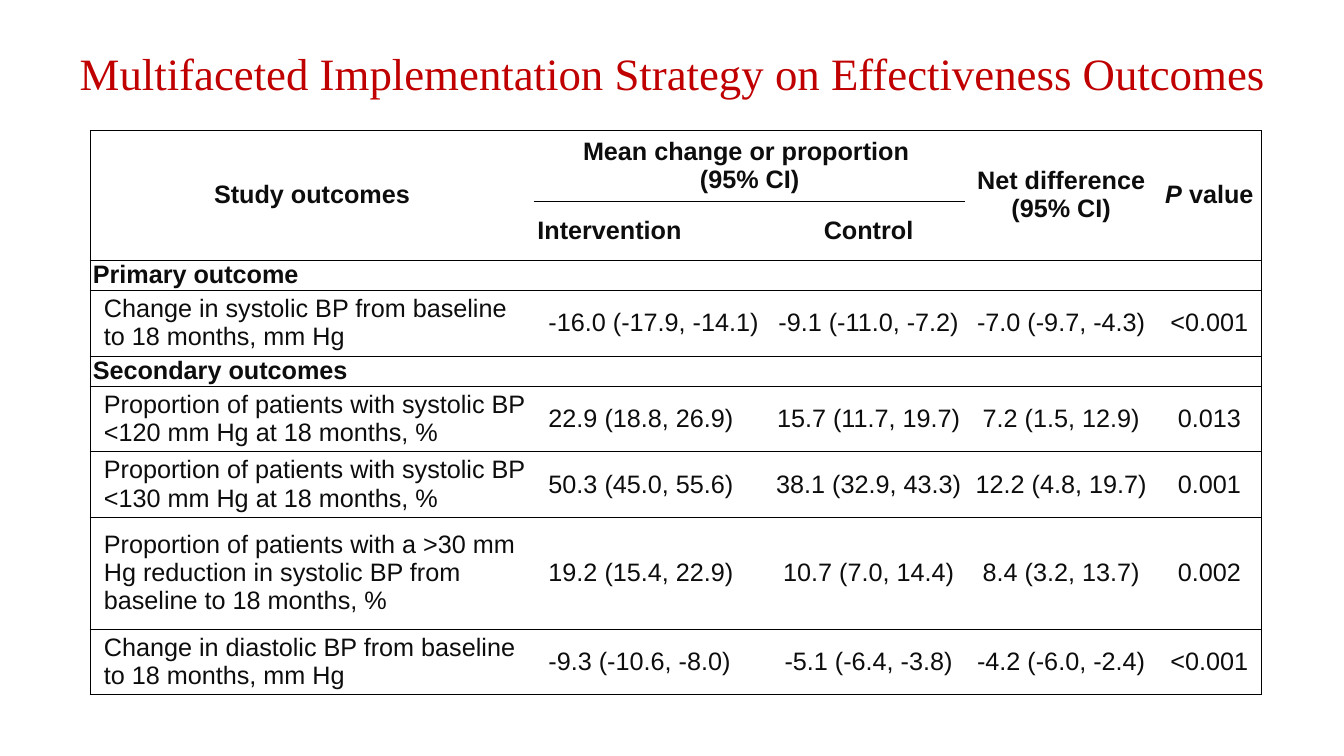
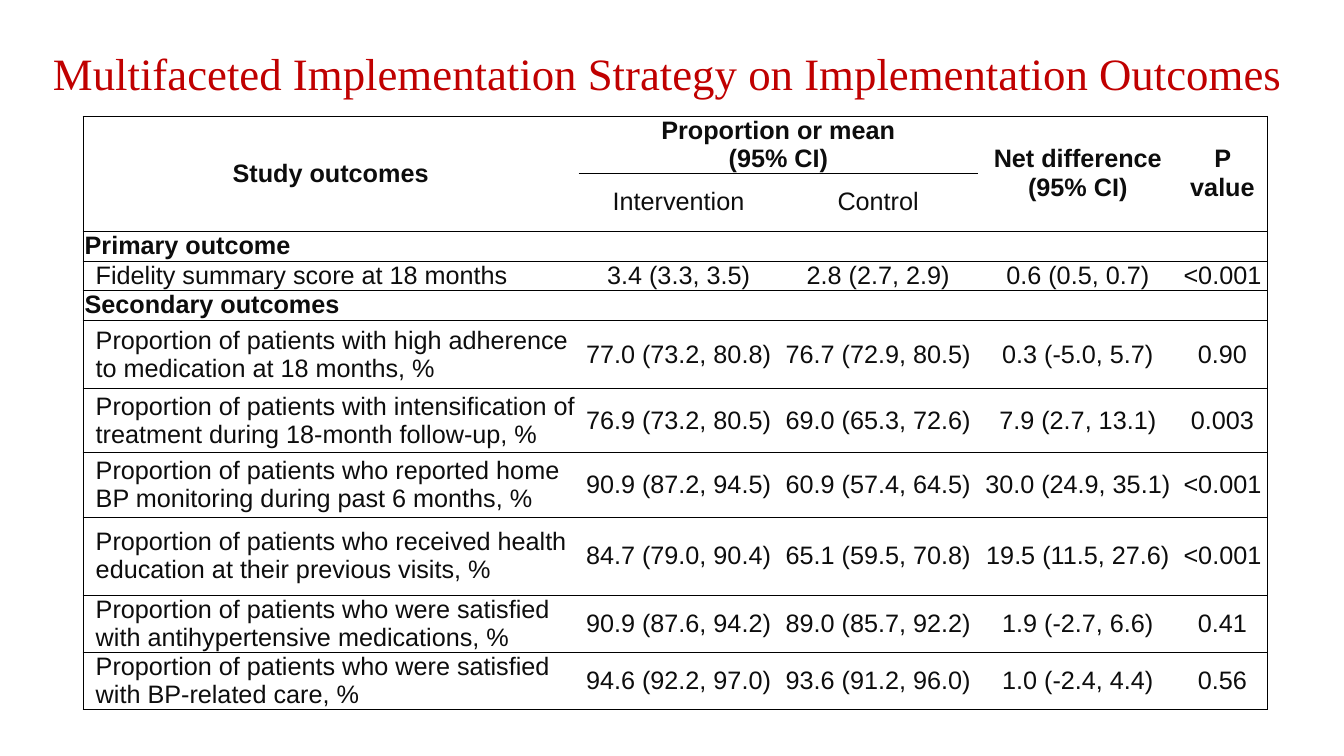
from pptx import Presentation
from pptx.dml.color import RGBColor
from pptx.enum import text
from pptx.oxml import parse_xml
from pptx.oxml.ns import nsdecls
from pptx.util import Inches, Pt

COLORS = {"title": "C00000", "ink": "0D0D0D", "rule": "000000"}
PLAIN = "{2D5ABB26-0587-4C30-8999-92F81FD0307C}"
CENTER, LEFT = text.PP_ALIGN.CENTER, text.PP_ALIGN.LEFT


def style(para, name, size, color, bold=False):
    font = para.font
    font.name, font.size, font.bold = name, Pt(size), bold
    font.color.rgb = RGBColor.from_string(COLORS[color])


def add_title(slide, box, words):
    title = slide.shapes.title
    title.left, title.top, title.width, title.height = map(Inches, box)
    frame = title.text_frame
    frame.auto_size = text.MSO_AUTO_SIZE.NONE
    frame.vertical_anchor = text.MSO_ANCHOR.MIDDLE
    frame.text = words
    para = frame.paragraphs[0]
    para.alignment, para.line_spacing = CENTER, 0.9
    style(para, "Times New Roman", 32, "title")


def put(cell, words, align=CENTER, bold=False, indent=0):
    """Fill a cell; words between asterisks are italic."""
    frame = cell.text_frame
    for n, line in enumerate(words.split("\n")):
        para = frame.add_paragraph() if n else frame.paragraphs[0]
        para.alignment = align
        style(para, "Arial", 18, "ink", bold)
        if indent:
            para._p.get_or_add_pPr().set("marL", str(Inches(indent)))
        for k, piece in enumerate(line.split("*")):
            if piece:
                run = para.add_run()
                run.text = piece
                if k % 2:
                    run.font.italic = True


def rule(cell, sides):
    for side in sides:
        cell._tc.get_or_add_tcPr().append(parse_xml(
            f'<a:ln{side} {nsdecls("a")} w="{Pt(0.25)}"><a:solidFill>'
            f'<a:srgbClr val="{COLORS["rule"]}"/></a:solidFill></a:ln{side}>'))


def frame_cells(table, inset, heads):
    """Rule every row, except between a section heading and its first row."""
    last = len(table.columns) - 1
    for r, row in enumerate(table.rows):
        for c, cell in enumerate(row.cells):
            cell.margin_left = cell.margin_right = Inches(inset[0])
            cell.margin_top = cell.margin_bottom = Inches(inset[1])
            cell.vertical_anchor = text.MSO_ANCHOR.MIDDLE
            if not cell.is_spanned:
                wide, high = (cell.span_width, cell.span_height) if cell.is_merge_origin else (1, 1)
                edges = {"L": c == 0, "R": c + wide - 1 == last,
                         "T": r - 1 not in heads, "B": r + high - 1 not in heads}
                rule(cell, [side for side, shown in edges.items() if shown])
            cell.fill.background()


def add_outcomes(slide, box, cols, heights, group, p_head, rows, inset,
                 sub_bold, merge_heads, left_col):
    """Outcome table: two header rows, then section headings and data rows."""
    shape = slide.shapes.add_table(len(heights), len(cols), *map(Inches, box))
    table = shape.table
    table.first_row = table.horz_banding = False
    table._tbl.tblPr.find("{*}tableStyleId").text = PLAIN
    for col, width in zip(table.columns, cols):
        col.width = Inches(width)
    for row, height in zip(table.rows, heights):
        row.height = Inches(height)

    # Header
    for c in (0, 3, 4):
        table.cell(0, c).merge(table.cell(1, c))
    table.cell(0, 1).merge(table.cell(0, 2))
    for c, words in ((0, "Study outcomes"), (1, group),
                     (3, "Net difference\n(95% CI)"), (4, p_head)):
        put(table.cell(0, c), words, bold=True)
    put(table.cell(1, 1), "Intervention", LEFT if left_col else CENTER, sub_bold)
    put(table.cell(1, 2), "Control", bold=sub_bold)

    # Body
    heads = []
    for r, (label, *values) in enumerate(rows, 2):
        first = table.cell(r, 0)
        if not values:
            heads.append(r)
            put(first, label, LEFT, True)
            if merge_heads:
                first.merge(table.cell(r, len(cols) - 1))
            continue
        put(first, label, LEFT, indent=0.11)
        for c, value in enumerate(values, 1):
            if c == 1 and left_col:
                put(table.cell(r, c), value, LEFT, indent=0.11)
            else:
                put(table.cell(r, c), value)
    frame_cells(table, inset, heads)


EFFECT = [
    ("Primary outcome",),
    ("Change in systolic BP from baseline to 18 months, mm Hg",
     "-16.0 (-17.9, -14.1)", "-9.1 (-11.0, -7.2)", "-7.0 (-9.7, -4.3)", "<0.001"),
    ("Secondary outcomes",),
    ("Proportion of patients with systolic BP <120 mm Hg at 18 months, %",
     "22.9 (18.8, 26.9)", "15.7 (11.7, 19.7)", "7.2 (1.5, 12.9)", "0.013"),
    ("Proportion of patients with systolic BP <130 mm Hg at 18 months, %",
     "50.3 (45.0, 55.6)", "38.1 (32.9, 43.3)", "12.2 (4.8, 19.7)", "0.001"),
    ("Proportion of patients with a >30 mm Hg reduction in systolic BP from baseline to 18 months, %",
     "19.2 (15.4, 22.9)", "10.7 (7.0, 14.4)", "8.4 (3.2, 13.7)", "0.002"),
    ("Change in diastolic BP from baseline to 18 months, mm Hg",
     "-9.3 (-10.6, -8.0)", "-5.1 (-6.4, -3.8)", "-4.2 (-6.0, -2.4)", "<0.001"),
]
PROCESS = [
    ("Primary outcome",),
    ("Fidelity summary score at 18 months",
     "3.4 (3.3, 3.5)", "2.8 (2.7, 2.9)", "0.6 (0.5, 0.7)", "<0.001"),
    ("Secondary outcomes",),
    ("Proportion of patients with high adherence to medication at 18 months, %",
     "77.0 (73.2, 80.8)", "76.7 (72.9, 80.5)", "0.3 (-5.0, 5.7)", "0.90"),
    ("Proportion of patients with intensification of treatment during 18-month follow-up, %",
     "76.9 (73.2, 80.5)", "69.0 (65.3, 72.6)", "7.9 (2.7, 13.1)", "0.003"),
    ("Proportion of patients who reported home BP monitoring during past 6 months, %",
     "90.9 (87.2, 94.5)", "60.9 (57.4, 64.5)", "30.0 (24.9, 35.1)", "<0.001"),
    ("Proportion of patients who received health education at their previous visits, %",
     "84.7 (79.0, 90.4)", "65.1 (59.5, 70.8)", "19.5 (11.5, 27.6)", "<0.001"),
    ("Proportion of patients who were satisfied with antihypertensive medications, %",
     "90.9 (87.6, 94.2)", "89.0 (85.7, 92.2)", "1.9 (-2.7, 6.6)", "0.41"),
    ("Proportion of patients who were satisfied with BP-related care, %",
     "94.6 (92.2, 97.0)", "93.6 (91.2, 96.0)", "1.0 (-2.4, 4.4)", "0.56"),
]


def main():
    deck = Presentation()
    deck.slide_width, deck.slide_height = Inches(13.33), Inches(7.5)
    layout = deck.slide_layouts[5]

    # Effectiveness outcomes
    slide = deck.slides.add_slide(layout)
    add_title(slide, (0.68, 0.35, 11.99, 0.81),
              "Multifaceted Implementation Strategy on Effectiveness Outcomes ")
    add_outcomes(slide, (0.89, 1.29, 11.62, 5.57), (4.41, 2.36, 1.91, 1.91, 1.03),
                 (0.71, 0.57, 0.29, 0.65, 0.29, 0.65, 0.65, 1.11, 0.65),
                 "Mean change or proportion \n(95% CI)", "*P* value", EFFECT,
                 inset=(0.03, 0.01), sub_bold=True, merge_heads=True, left_col=True)

    # Implementation outcomes
    slide = deck.slides.add_slide(layout)
    add_title(slide, (0.4, 0.35, 12.56, 0.81),
              "Multifaceted Implementation Strategy on Implementation Outcomes ")
    add_outcomes(slide, (0.82, 1.15, 11.75, 5.85), (4.92, 1.98, 1.98, 1.98, 0.89),
                 (0.57, 0.57, 0.28, 0.28, 0.28, 0.67, 0.64, 0.64, 0.77, 0.57, 0.57),
                 "Proportion or mean\n(95% CI)", "P value", PROCESS,
                 inset=(0.02, 0), sub_bold=False, merge_heads=False, left_col=False)

    deck.save("out.pptx")


if __name__ == "__main__":
    main()
